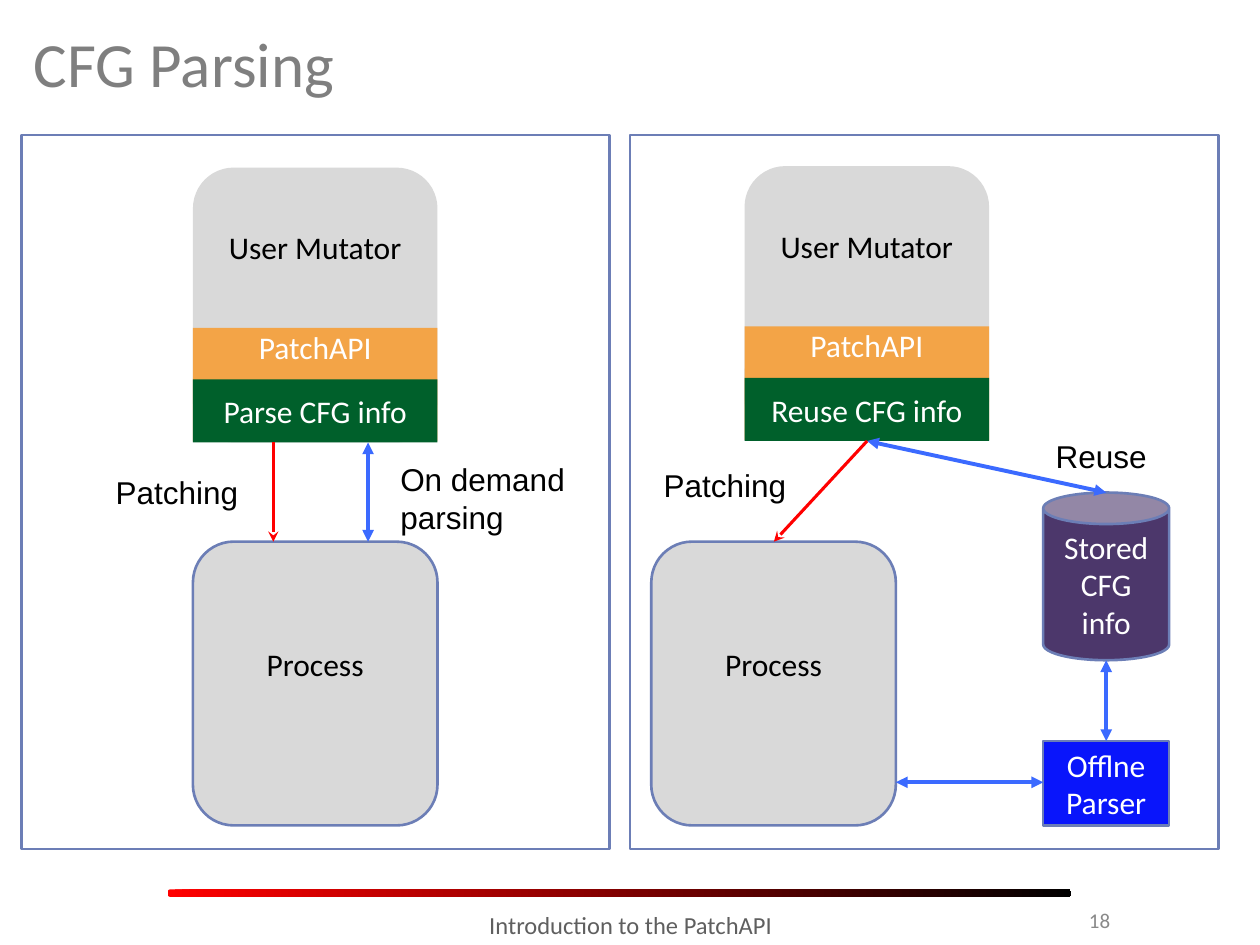
from lxml import etree
from pptx import Presentation
from pptx.dml.color import RGBColor
from pptx.enum import shapes, text
from pptx.oxml.ns import qn
from pptx.util import Cm, Pt

rgb = RGBColor.from_string
KIND = shapes.MSO_SHAPE
ALIGN = text.PP_ALIGN
ANCHOR = text.MSO_ANCHOR
GREY, ORANGE, GREEN, PURPLE, BLUE = "D9D9D9", "F3A447", "00602B", "4C376B", "0915FB"
OUTLINE, ARROW_BLUE, RED, BLACK, WHITE = "6C7EB6", "3B6AFF", "FF0000", "000000", "FFFFFF"


def write(shape, words, size=18, font="Calibri", color=BLACK, align=ALIGN.CENTER,
          anchor=ANCHOR.MIDDLE, top=0.13, wrap=True):
    frame = shape.text_frame
    frame.text = words
    frame.word_wrap = wrap
    frame.vertical_anchor = anchor
    frame.margin_top = Cm(top)
    for paragraph in frame.paragraphs:
        paragraph.alignment = align
        run_font = paragraph.runs[0].font
        run_font.size, run_font.name = Pt(size), font
        run_font.color.rgb = rgb(color)


def block(kind, left, top, width, height, fill=None, outline=None):
    """Add a preset shape in centimetres, unfilled or unlined by default."""
    shape = slide.shapes.add_shape(kind, Cm(left), Cm(top), Cm(width), Cm(height))
    shape.shadow.inherit = False
    if fill:
        shape.fill.solid()
        shape.fill.fore_color.rgb = rgb(fill)
    else:
        shape.fill.background()
    if outline:
        shape.line.color.rgb = rgb(outline)
        shape.line.width = Pt(1.5)
    else:
        shape.line.fill.background()
    return shape


prs = Presentation()
prs.slide_width, prs.slide_height = Cm(25.4), Cm(19.05)
slide = prs.slides.add_slide(prs.slide_layouts[5])

# Title, footer bar and footer texts
title = slide.shapes.title
title.left, title.top, title.width, title.height = Cm(0.43), Cm(0.2), Cm(24.56), Cm(2.11)
write(title, "CFG Parsing", size=36, color="7F7F7F", align=ALIGN.LEFT)

bar = block(KIND.ROUNDED_RECTANGLE, 3.38, 17.93, 18.21, 0.15)
bar.adjustments[0] = 0.33
bar.fill.gradient()
bar.fill.gradient_angle = 0
for stop, position, color in zip(bar.fill.gradient_stops, (0, 1), (RED, BLACK)):
    stop.position = position
    stop.color.rgb = rgb(color)

page_number = slide.shapes.add_textbox(Cm(19.25), Cm(18.03), Cm(3.38), Cm(1.02))
write(page_number, "18", size=12, color="898989", align=ALIGN.RIGHT)
footer = slide.shapes.add_textbox(Cm(6.15), Cm(18.21), Cm(13.13), Cm(1.02))
write(footer, "Introduction to the PatchAPI", size=14, color="5F5F5F", anchor=ANCHOR.TOP)

# Both panels: mutator stack above, process below
for panel_left, stack_left, stack_top, process_left, cfg_use in (
    (0.43, 3.89, 3.38, 3.89, "Parse CFG info"),
    (12.7, 15.01, 3.35, 13.13, "Reuse CFG info"),
):
    block(KIND.RECTANGLE, panel_left, 2.72, 11.86, 14.4, outline=OUTLINE)
    mutator = block(KIND.ROUNDED_RECTANGLE, stack_left, stack_top, 4.93, 5.54, GREY)
    write(mutator, "User Mutator", anchor=ANCHOR.TOP, top=0.98)
    patch_api = block(KIND.RECTANGLE, stack_left, stack_top + 3.23, 4.93, 2.29, ORANGE)
    write(patch_api, "PatchAPI", color=WHITE, anchor=ANCHOR.TOP, top=0)
    cfg_info = block(KIND.RECTANGLE, stack_left, stack_top + 4.27, 4.93, 1.27, GREEN)
    write(cfg_info, cfg_use, color=WHITE)
    process = block(KIND.ROUNDED_RECTANGLE, process_left, 10.92, 4.93, 5.72, GREY, OUTLINE)
    write(process, "Process", anchor=ANCHOR.TOP, top=1.84)

# Offline parsing parts
stored_info = block(KIND.CAN, 21.03, 9.93, 2.54, 3.38, PURPLE, OUTLINE)
write(stored_info, "Stored CFG info", color=WHITE)
parser = block(KIND.RECTANGLE, 21.03, 14.94, 2.54, 1.7, BLUE, OUTLINE)
write(parser, "Offlne Parser", color=WHITE)

# Arrows: blue ones point both ways, red ones show patching
both_ways = {"headEnd": "triangle", "tailEnd": "triangle"}
patching = {"tailEnd": "stealth"}
for x1, y1, x2, y2, color, width, ends in (
    (7.42, 8.92, 7.42, 10.92, ARROW_BLUE, 2.25, both_ways),
    (17.48, 8.89, 22.3, 9.93, ARROW_BLUE, 2.25, both_ways),
    (18.06, 15.77, 21.03, 15.77, ARROW_BLUE, 2.25, both_ways),
    (22.3, 14.94, 22.3, 13.31, ARROW_BLUE, 2.25, both_ways),
    (17.48, 8.89, 15.6, 10.92, RED, 1.75, patching),
    (5.51, 8.92, 5.51, 10.92, RED, 1.75, patching),
):
    arrow = slide.shapes.add_connector(
        shapes.MSO_CONNECTOR.STRAIGHT, Cm(x1), Cm(y1), Cm(x2), Cm(y2))
    arrow.line.color.rgb = rgb(color)
    arrow.line.width = Pt(width)
    for end, head in ends.items():
        etree.SubElement(arrow.line._get_or_add_ln(), qn(f"a:{end}"), type=head)
    etree.SubElement(arrow._element.spPr, qn("a:effectLst"))

# Arrow labels
for words, left, top, width, height in (
    ("On demand\nparsing", 7.82, 9.14, 4.04, 1.8),
    ("Reuse", 21.03, 8.69, 2.36, 1.02),
    ("Patching", 2.08, 9.4, 3, 1.02),
    ("Patching", 13.13, 9.27, 3, 1.02),
):
    label = slide.shapes.add_textbox(Cm(left), Cm(top), Cm(width), Cm(height))
    write(label, words, font="Arial", align=ALIGN.LEFT, anchor=ANCHOR.TOP, wrap=False)
    label.text_frame.auto_size = text.MSO_AUTO_SIZE.SHAPE_TO_FIT_TEXT

prs.save("out.pptx")
